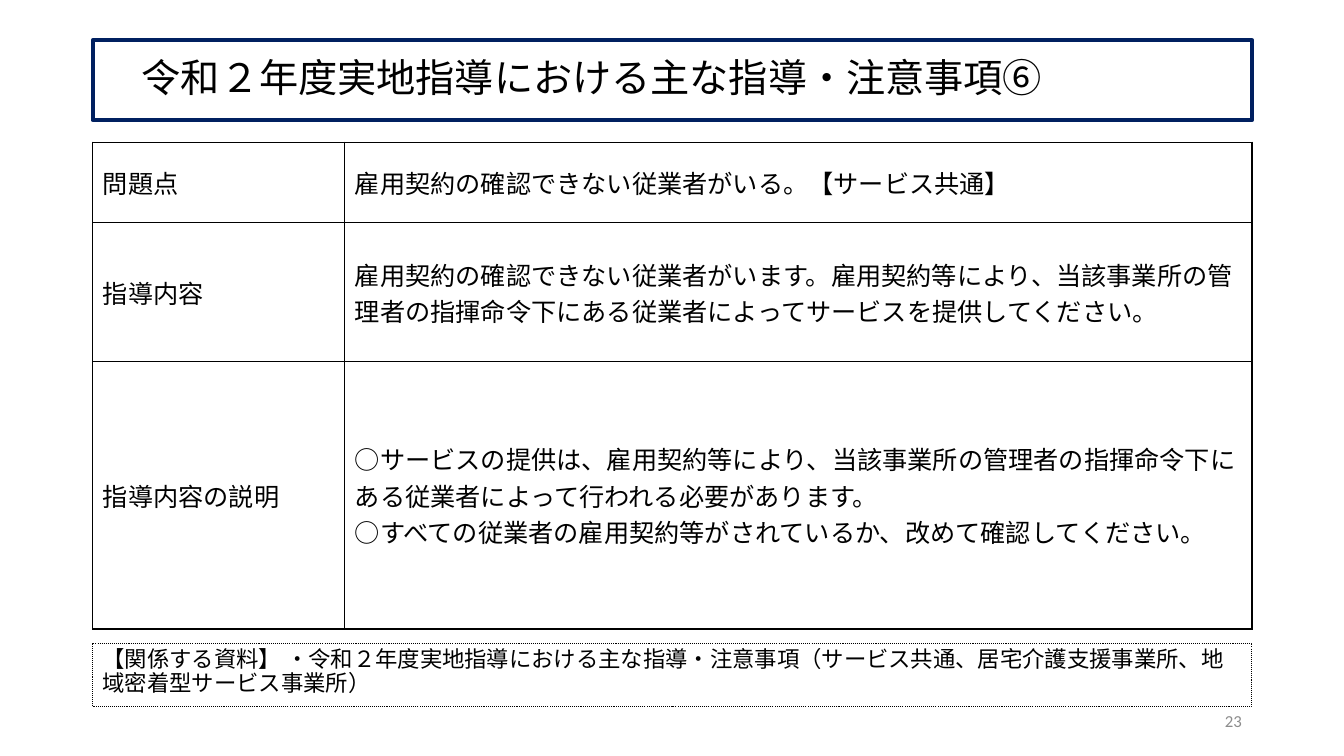
from lxml import etree
from pptx import Presentation
from pptx import util as u
from pptx.dml.color import RGBColor
from pptx.enum import dml, shapes, text
from pptx.oxml import ns

COLOURS = {"ink": "000000", "frame": "002060", "muted": "8C8C8C"}
LEFT, WIDTH = 66.24, 828

GUIDANCE_ROWS = [
    (57.6, "問題点", ["雇用契約の確認できない従業者がいる。【サービス共通】"]),
    (99.4, "指導内容", [
        "雇用契約の確認できない従業者がいます。雇用契約等により、当該事業所の"
        "管理者の指揮命令下にある従業者によってサービスを提供してください。"]),
    (190.8, "指導内容の説明", [
        "○サービスの提供は、雇用契約等により、当該事業所の管理者の指揮命令下に"
        "ある従業者によって行われる必要があります。",
        "○すべての従業者の雇用契約等がされているか、改めて確認してください。"]),
]


def write(frame, *lines, size=18, font="Calibri", colour="ink",
          align=text.PP_ALIGN.LEFT, spacing=None, before=0):
    """Fill a text frame with one paragraph per line."""
    frame.word_wrap = True
    for index, line in enumerate(lines):
        para = frame.add_paragraph() if index else frame.paragraphs[0]
        para.alignment = align
        para.line_spacing = spacing
        para.space_before = u.Pt(before)
        span = para.add_run()
        span.text = line
        span.font.size = u.Pt(size)
        span.font.name = font
        span.font.color.rgb = RGBColor.from_string(COLOURS[colour])


class SlideBuilder:
    def __init__(self, page, border=1):
        self.page = page
        self.border = border

    def framed_box(self, top, height, line, line_width, content,
                   dash=None, anchor=text.MSO_ANCHOR.TOP, **style):
        box = self.page.shapes.add_shape(
            shapes.MSO_SHAPE.RECTANGLE,
            u.Pt(LEFT), u.Pt(top), u.Pt(WIDTH), u.Pt(height))
        box.shadow.inherit = False
        box.fill.background()
        box.line.color.rgb = RGBColor.from_string(COLOURS[line])
        box.line.width = u.Pt(line_width)
        if dash is not None:
            box.line.dash_style = dash
        box.text_frame.vertical_anchor = anchor
        write(box.text_frame, content, **style)

    def label(self, left, top, width, height, content, **style):
        box = self.page.shapes.add_textbox(
            u.Pt(left), u.Pt(top), u.Pt(width), u.Pt(height))
        box.text_frame.vertical_anchor = text.MSO_ANCHOR.MIDDLE
        write(box.text_frame, content, **style)

    def table(self, top, column_widths, rows):
        height = sum(row[0] for row in rows)
        grid = self.page.shapes.add_table(
            len(rows), len(column_widths),
            u.Pt(LEFT), u.Pt(top), u.Pt(WIDTH), u.Pt(height)).table
        grid.first_row = grid.horz_banding = False
        for column, width in zip(grid.columns, column_widths):
            column.width = u.Pt(width)
        for row, (row_height, heading, details) in zip(grid.rows, rows):
            row.height = u.Pt(row_height)
            self.cell(row.cells[0], heading, font="Arial")
            self.cell(row.cells[1], *details)

    def cell(self, cell, *lines, **style):
        cell.vertical_anchor = text.MSO_ANCHOR.MIDDLE
        write(cell.text_frame, *lines, **style)
        # Borders come before the fill in the cell properties
        properties = cell._tc.get_or_add_tcPr()
        for side in ("a:lnL", "a:lnR", "a:lnT", "a:lnB"):
            edge = etree.SubElement(properties, ns.qn(side),
                                    w=str(u.Pt(self.border)))
            paint = etree.SubElement(edge, ns.qn("a:solidFill"))
            etree.SubElement(paint, ns.qn("a:srgbClr"), val=COLOURS["ink"])
        cell.fill.background()


def main():
    deck = Presentation()
    deck.slide_width, deck.slide_height = u.Pt(960), u.Pt(540)
    builder = SlideBuilder(deck.slides.add_slide(deck.slide_layouts[6]))

    # Title
    builder.framed_box(28.8, 57, "frame", 3,
                       "\u3000令和２年度実地指導における主な指導・注意事項⑥".replace("\u3000", "　"),
                       anchor=text.MSO_ANCHOR.MIDDLE, size=28, spacing=0.9)

    # Guidance table
    builder.table(101.5, (180, 648), GUIDANCE_ROWS)

    # Page number
    builder.label(678.24, 500.4, 216, 28.8, "23", size=12, colour="muted",
                  align=text.PP_ALIGN.RIGHT)

    # Related material
    builder.framed_box(
        459.4, 45.4, "ink", 0.75,
        "【関係する資料】 ・令和２年度実地指導における主な指導・注意事項"
        "（サービス共通、居宅介護支援事業所、地域密着型サービス事業所）",
        dash=dml.MSO_LINE.ROUND_DOT, size=16, spacing=0.9, before=10)

    deck.save("out.pptx")


if __name__ == "__main__":
    main()
